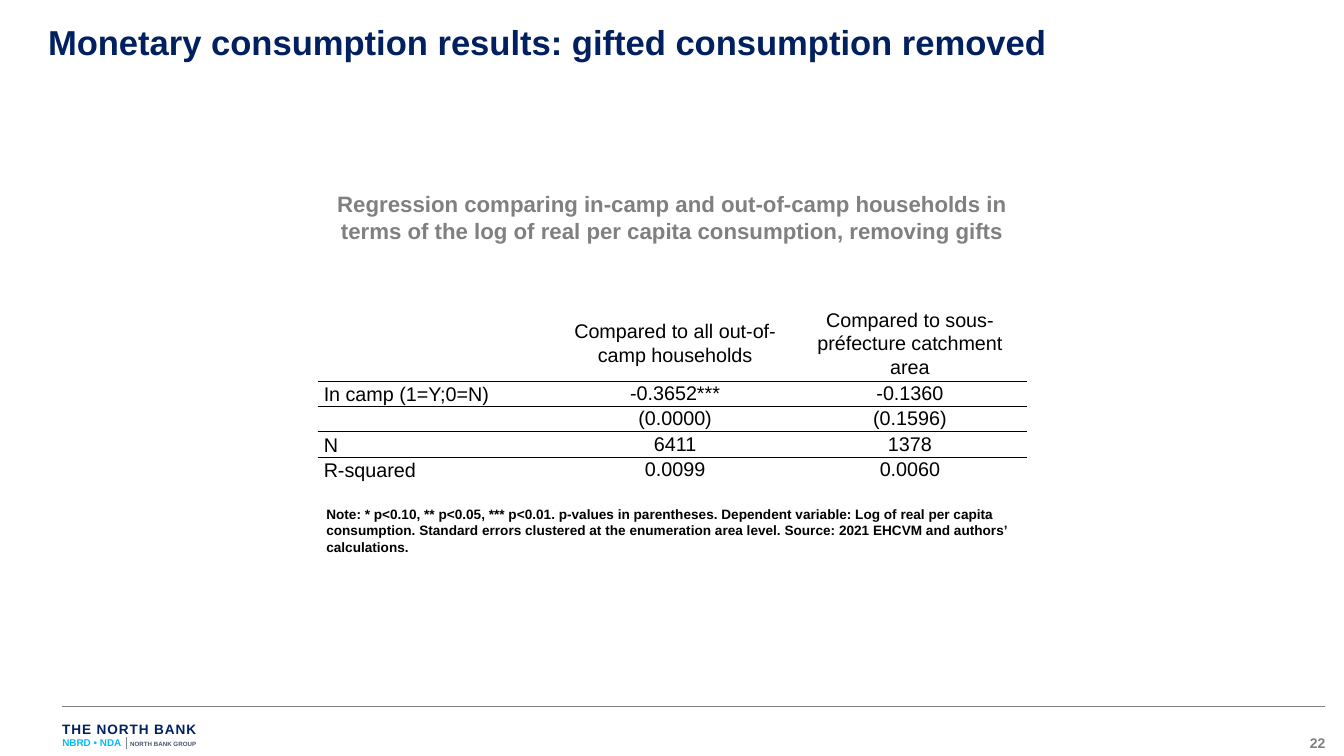
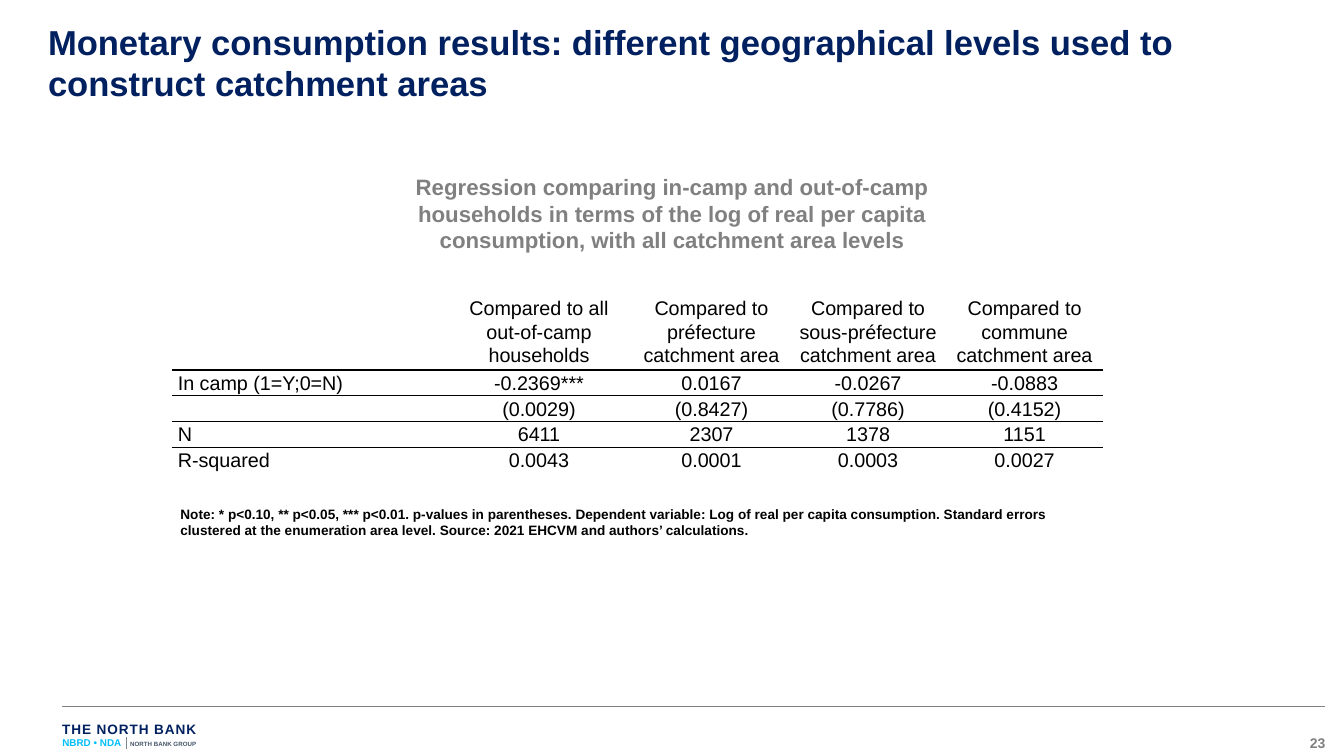
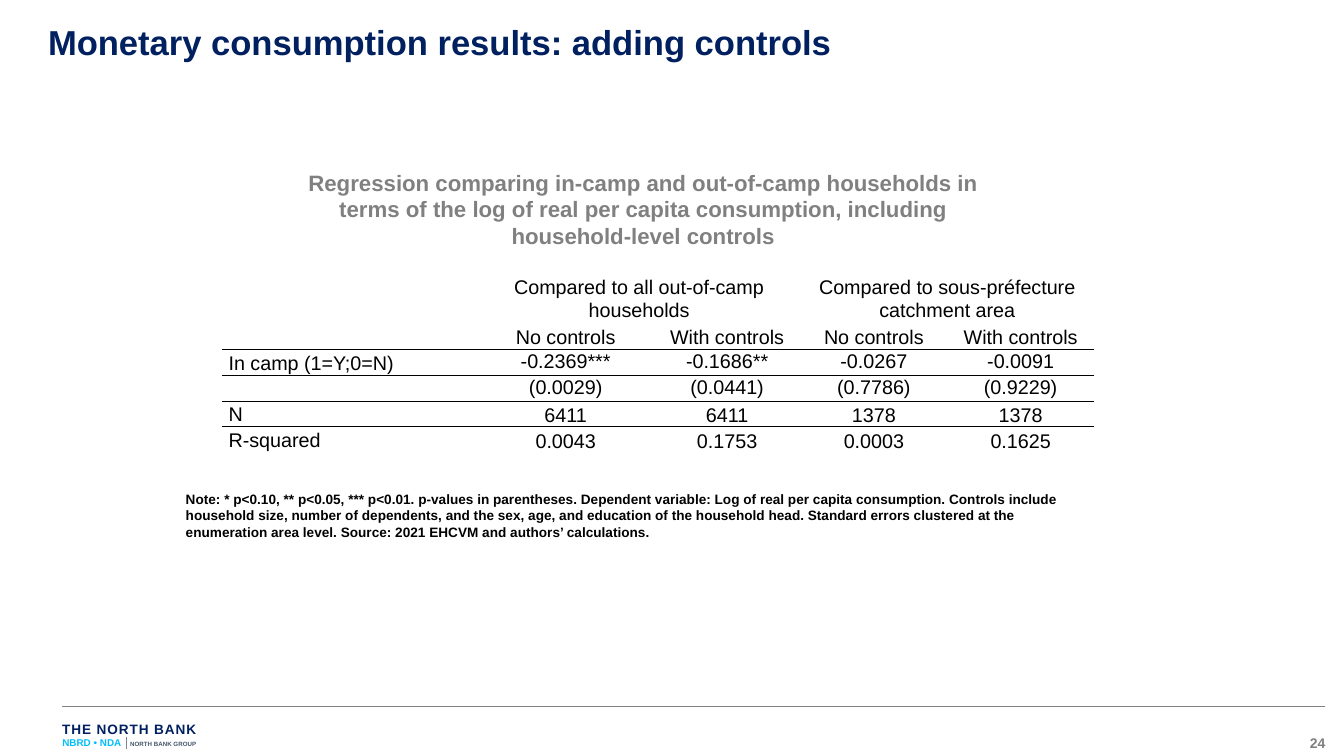
from lxml import etree
from pptx import Presentation
from pptx import util as u
from pptx.dml.color import RGBColor
from pptx.enum import shapes, text
from pptx.oxml import parse_xml
from pptx.oxml.ns import nsdecls, qn

NAVY = RGBColor(0x00, 0x20, 0x60)
GREY = RGBColor(0x80, 0x80, 0x80)
CYAN = RGBColor(0x00, 0xBE, 0xFA)
SLATE = RGBColor(0x44, 0x54, 0x6A)
BLACK = RGBColor(0x00, 0x00, 0x00)
FONT = "Arial"
LEFT, CENTER, RIGHT = (text.PP_ALIGN.LEFT, text.PP_ALIGN.CENTER, text.PP_ALIGN.RIGHT)
TOP, MIDDLE, BOTTOM = (text.MSO_ANCHOR.TOP, text.MSO_ANCHOR.MIDDLE, text.MSO_ANCHOR.BOTTOM)
NO_STYLE = "{2D5ABB26-0587-4C30-8999-92F81FD0307C}"

NOTE = ("Note: * p<0.10, ** p<0.05, *** p<0.01. p-values in parentheses. "
        "Dependent variable: Log of real per capita consumption. {}Standard errors "
        "clustered at the enumeration area level. Source: 2021 EHCVM and authors’ calculations.")
CONTROLS = ("Controls include household size, number of dependents, and the sex, age, "
            "and education of the household head. ")
SUBTITLE = ("Regression comparing in-camp and out-of-camp households in terms of "
            "the log of real per capita consumption, ")
ALL = "Compared to all out-of-camp households"
SOUS = "Compared to sous-préfecture catchment area"
LABELS = ["In camp (1=Y;0=N)", "", "N", "R-squared"]

# Boxes are (left, top, width, height) in inches; results are one list per row of LABELS.
SLIDES = [
    dict(title="Monetary consumption results: gifted consumption removed",
         subtitle=SUBTITLE + "removing gifts", subtitle_at=(3.57, 2.09, 7.97, 0.71),
         note=NOTE.format(""), note_at=(3.57, 5.64, 7.97, 0.66),
         table_at=(3.57, 3.43), cols=[2.7, 2.64, 2.64], header_rows=[0.79], row=0.26,
         anchors=[TOP] * 4,
         header=[["", ALL, SOUS]],
         results=[["-0.3652***", "-0.1360"], ["(0.0000)", "(0.1596)"],
                  ["6411", "1378"], ["0.0099", "0.0060"]]),
    dict(title="Monetary consumption results: different geographical levels used to "
               "construct catchment areas",
         subtitle=SUBTITLE + "with all catchment area levels", subtitle_at=(4.1, 1.9, 6.91, 1.01),
         note=NOTE.format(""), note_at=(1.93, 5.64, 10.47, 0.47),
         table_at=(1.93, 3.3), cols=[3.07, 2.12] + [1.76] * 3, header_rows=[0.86], row=0.29,
         anchors=[MIDDLE] * 4,
         header=[["", ALL, "Compared to préfecture catchment area", SOUS,
                  "Compared to commune catchment area"]],
         results=[["-0.2369***", "0.0167", "-0.0267", "-0.0883"],
                  ["(0.0029)", "(0.8427)", "(0.7786)", "(0.4152)"],
                  ["6411", "2307", "1378", "1151"],
                  ["0.0043", "0.0001", "0.0003", "0.0027"]]),
    dict(title="Monetary consumption results: adding controls",
         subtitle=SUBTITLE + "including household-level controls",
         subtitle_at=(3.09, 1.85, 8.28, 1.01),
         note=NOTE.format(CONTROLS), note_at=(1.99, 5.47, 10.47, 0.66),
         table_at=(2.5, 3.07), cols=[2.87, 1.98] + [1.65] * 3, header_rows=[0.57, 0.29], row=0.29,
         anchors=[TOP, TOP, BOTTOM, BOTTOM],
         header=[["", ALL, None, SOUS, None], [""] + ["No controls", "With controls"] * 2],
         results=[["-0.2369***", "-0.1686**", "-0.0267", "-0.0091"],
                  ["(0.0029)", "(0.0441)", "(0.7786)", "(0.9229)"],
                  ["6411", "6411", "1378", "1378"],
                  ["0.0043", "0.1753", "0.0003", "0.1625"]]),
]


def add_run(p, content, size, color, bold=True):
    r = p.add_run()
    r.text = content
    r.font.color.rgb = color
    for name, value in dict(name=FONT, size=u.Pt(size), bold=bold).items():
        setattr(r.font, name, value)
    return r


def add_text(s, at, runs, align=LEFT, inset=(0, 0)):
    """Add a text box of one paragraph; runs are (text, size, colour)."""
    tf = s.shapes.add_textbox(*map(u.Inches, at)).text_frame
    x, y = map(u.Inches, inset)
    for name, value in dict(word_wrap=True, margin_left=x, margin_right=x,
                            margin_top=y, margin_bottom=y).items():
        setattr(tf, name, value)
    p = tf.paragraphs[0]
    p.alignment = align
    return [add_run(p, *run) for run in runs]


prs = Presentation()
prs.slide_width, prs.slide_height = u.Inches(15.11), u.Inches(8.5)

for number, d in enumerate(SLIDES, start=22):
    s = prs.slides.add_slide(prs.slide_layouts[6])

    # Footer
    add_text(s, (14.3, 8.26, 0.6, 0.19), [(str(number), 11.3, GREY)], RIGHT)
    bank, = add_text(s, (0.7, 8.11, 2, 0.19), [("THE NORTH BANK", 11, NAVY)])
    bank.font._element.set("spc", "70")
    rule = s.shapes.add_connector(shapes.MSO_CONNECTOR.STRAIGHT,
                                  *map(u.Inches, (0.7, 7.94, 14.9, 7.94)))
    rule.line.color.rgb, rule.line.width = GREY, u.Pt(0.75)
    etree.SubElement(rule._element.spPr, qn("a:effectLst"))
    add_text(s, (0.7, 8.28, 1.61, 0.13),
             [("NBRD • NDA ", 8, CYAN), ("│", 8, SLATE), ("NORTH BANK GROUP", 5, SLATE)])

    # Headings and note
    add_text(s, (0.54, 0.23, 13.69, 0.47), [(d["title"], 28, NAVY)])
    add_text(s, d["subtitle_at"], [(d["subtitle"], 18, GREY)], CENTER, (0.1, 0.05))
    add_text(s, d["note_at"], [(d["note"], 11, BLACK)], LEFT, (0.1, 0.05))

    # Regression table
    n_head = len(d["header"])
    rows = d["header"] + [[label] + values for label, values in zip(LABELS, d["results"])]
    heights = d["header_rows"] + [d["row"]] * len(LABELS)
    anchors = [MIDDLE] * n_head + d["anchors"]
    frame = s.shapes.add_table(len(rows), len(d["cols"]), *map(
        u.Inches, (*d["table_at"], sum(d["cols"]), sum(heights))))
    table = frame.table
    table.first_row = table.horz_banding = False
    table._tbl.tblPr.find(qn("a:tableStyleId")).text = NO_STYLE
    for column, width in zip(table.columns, d["cols"]):
        column.width = u.Inches(width)
    for i, values in enumerate(rows):
        table.rows[i].height = u.Inches(heights[i])
        for j, value in enumerate(values):
            cell = table.cell(i, j)
            if value is None:
                table.cell(i, j - 1).merge(cell)
            side = u.Inches(0.07)
            for name, setting in dict(margin_left=side, margin_right=side, margin_top=0,
                                      margin_bottom=0,
                                      vertical_anchor=anchors[i] if j else MIDDLE).items():
                setattr(cell, name, setting)
            cell.fill.background()
            p = cell.text_frame.paragraphs[0]
            p.alignment, p.line_spacing = (CENTER if j else LEFT), 1.07
            if value:
                add_run(p, value, 16, BLACK, False)
            else:
                etree.SubElement(p._p, qn("a:endParaRPr"), sz="1000")
            edge = {n_head - 1: "lnB", n_head: "lnT", n_head + 1: "lnB", n_head + 2: "lnT"}.get(i)
            if edge:
                cell._tc.tcPr.insert(0, parse_xml(
                    f'<a:{edge} {nsdecls("a")} w="12700"><a:solidFill>'
                    f'<a:srgbClr val="{BLACK}"/></a:solidFill></a:{edge}>'))

prs.save("out.pptx")
